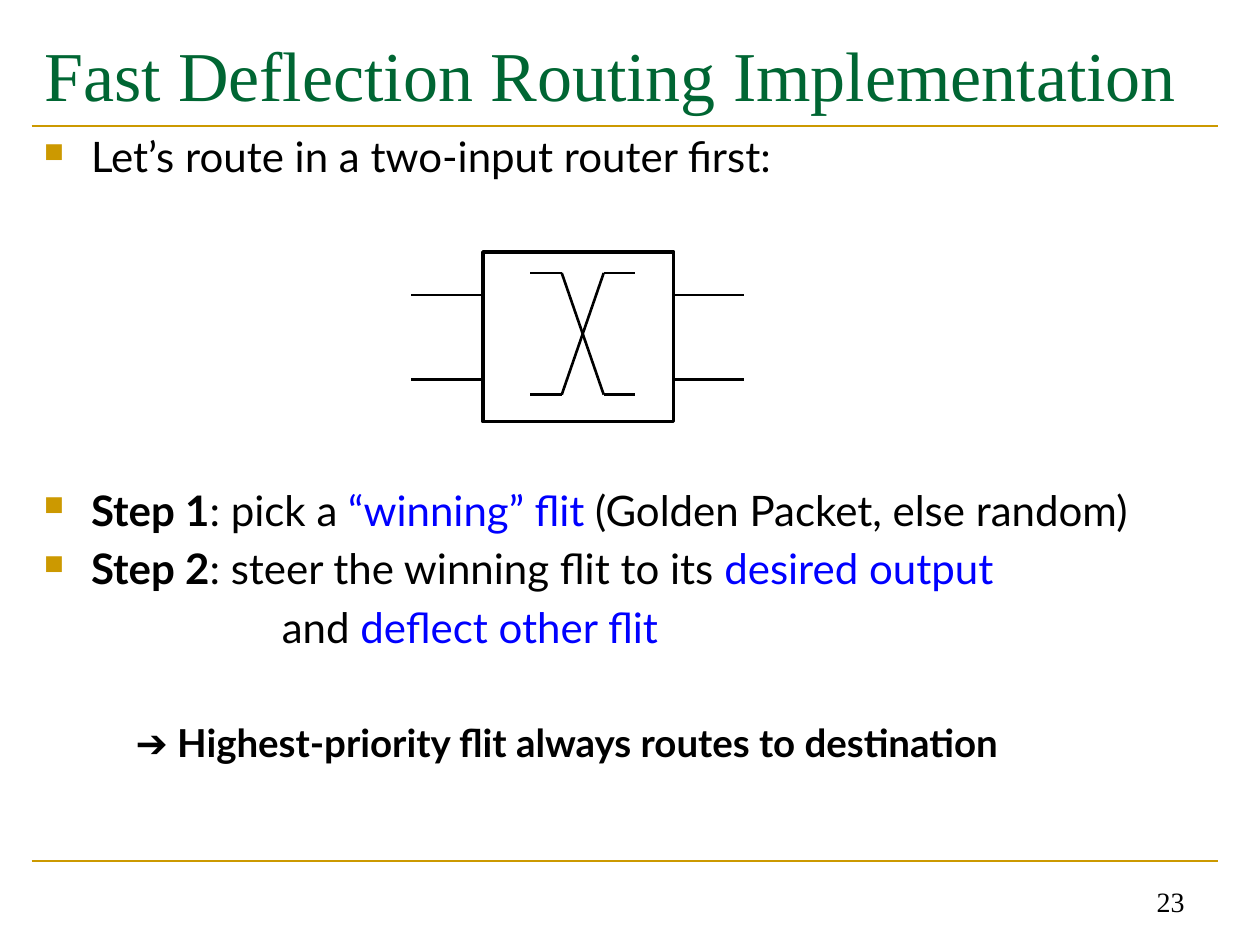
from dataclasses import dataclass

import pptx
import pptx.dml.color
import pptx.enum.shapes
import pptx.enum.text
import pptx.oxml.xmlchemy
import pptx.util

Pt = pptx.util.Pt
ALIGN = pptx.enum.text.PP_ALIGN
ANCHOR = pptx.enum.text.MSO_ANCHOR
GOLD, GREEN, BLUE, BLACK, WHITE = "CC9900", "006633", "0000FF", "000000", "FFFFFF"
SERIF, SANS = "Times New Roman", "Lato"


@dataclass
class Run:
    text: str
    color: str = BLACK
    bold: bool = False


@dataclass
class Para:
    runs: list[Run]
    size: float = 24
    left: float = 27
    before: float = 4.8
    bullet: bool = True


@dataclass
class Line:
    x1: float
    y1: float
    x2: float
    y2: float
    color: str = BLACK


def paint(code: str) -> pptx.dml.color.RGBColor:
    return pptx.dml.color.RGBColor.from_string(code)


def make_node(tag: str, **attrs: str):
    node = pptx.oxml.xmlchemy.OxmlElement(tag)
    for key, value in attrs.items():
        node.set(key, value)
    return node


def add_line(shapes, line: Line) -> None:
    ends = [Pt(v) for v in (line.x1, line.y1, line.x2, line.y2)]
    wire = shapes.add_connector(pptx.enum.shapes.MSO_CONNECTOR.STRAIGHT, *ends)
    wire.line.color.rgb = paint(line.color)
    wire.line.width = Pt(1.5)
    wire._element.spPr.append(make_node("a:effectLst"))


def add_run(para, run: Run, size: float, face: str) -> None:
    part = para.add_run()
    part.text = run.text
    font = part.font
    font.name, font.size, font.bold = face, Pt(size), run.bold
    font.color.rgb = paint(run.color)


def add_bullet(props) -> None:
    """Give a paragraph a small gold square."""
    tint = make_node("a:buClr")
    tint.append(make_node("a:srgbClr", val=GOLD))
    props.append(tint)
    props.append(make_node("a:buSzPct", val="65000"))
    props.append(make_node("a:buChar", char="■"))


def add_para(para, item: Para) -> None:
    para.space_before = Pt(item.before)
    props = para._p.get_or_add_pPr()
    props.set("marL", str(int(Pt(item.left))))
    props.set("indent", str(int(Pt(-27 if item.bullet else 0))))
    if item.bullet:
        add_bullet(props)
    for run in item.runs:
        add_run(para, run, item.size, SANS)


def add_box(slide, left: float, top: float, width: float, height: float):
    box = slide.shapes.add_textbox(Pt(left), Pt(top), Pt(width), Pt(height))
    box.text_frame.word_wrap = True
    return box.text_frame


def add_title(slide, text: str) -> None:
    title = slide.shapes.title
    title.left, title.top = Pt(18), Pt(12)
    title.width, title.height = Pt(678), Pt(60)
    frame = title.text_frame
    frame.vertical_anchor = ANCHOR.MIDDLE
    para = frame.paragraphs[0]
    para.alignment = ALIGN.LEFT
    add_run(para, Run(text, GREEN), 40, SERIF)


def add_body(slide, items: list[Para]) -> None:
    frame = add_box(slide, 18, 71.3, 678, 420.5)
    for i, item in enumerate(items):
        add_para(frame.add_paragraph() if i else frame.paragraphs[0], item)


def add_router(slide) -> None:
    """Draw a two-by-two crossbar with its ports."""
    parts = slide.shapes.add_group_shape().shapes
    left, right = 276, 385
    case = parts.add_shape(
        pptx.enum.shapes.MSO_SHAPE.RECTANGLE, Pt(left), Pt(144), Pt(right - left), Pt(97)
    )
    case.shadow.inherit = False
    case.fill.solid()
    case.fill.fore_color.rgb = paint(WHITE)
    case.line.color.rgb = paint(BLACK)
    case.line.width = Pt(2)

    high, low = 156, 225.5
    for start, end in ((high, low), (low, high)):
        add_line(parts, Line(303, start, 321, start))
        add_line(parts, Line(321, start, 345, end))
        add_line(parts, Line(345, end, 363, end))
    for port in (168.5, 217):
        add_line(parts, Line(left - 41, port, left, port))
        add_line(parts, Line(right, port, right + 40, port))


def main() -> None:
    deck = pptx.Presentation()
    deck.slide_width, deck.slide_height = Pt(720), Pt(540)
    slide = deck.slides.add_slide(deck.slide_layouts[5])

    for y in (492, 72):
        add_line(slide.shapes, Line(18, y, 696, y, GOLD))
    add_title(slide, "Fast Deflection Routing Implementation")
    add_body(slide, [
        Para([Run("Let’s route in a two-input router first:")]),
        Para([
            Run("Step 1", bold=True),
            Run(": pick a "),
            Run("“winning” flit ", BLUE),
            Run("(Golden Packet, else random)"),
        ], before=173),
        Para([
            Run("Step 2", bold=True),
            Run(": steer the winning flit to its "),
            Run("desired output", BLUE),
        ]),
        Para([Run("and "), Run("deflect other flit", BLUE)], left=136, bullet=False),
        Para(
            [Run("➔ Highest-priority flit always routes to destination", bold=True)],
            size=22, left=52.5, before=38.3, bullet=False,
        ),
    ])

    number = add_box(slide, 516, 492, 168, 36)
    number.vertical_anchor = ANCHOR.BOTTOM
    number.paragraphs[0].alignment = ALIGN.RIGHT
    add_run(number.paragraphs[0], Run("23"), 16, SERIF)

    add_router(slide)
    deck.save("out.pptx")


if __name__ == "__main__":
    main()
